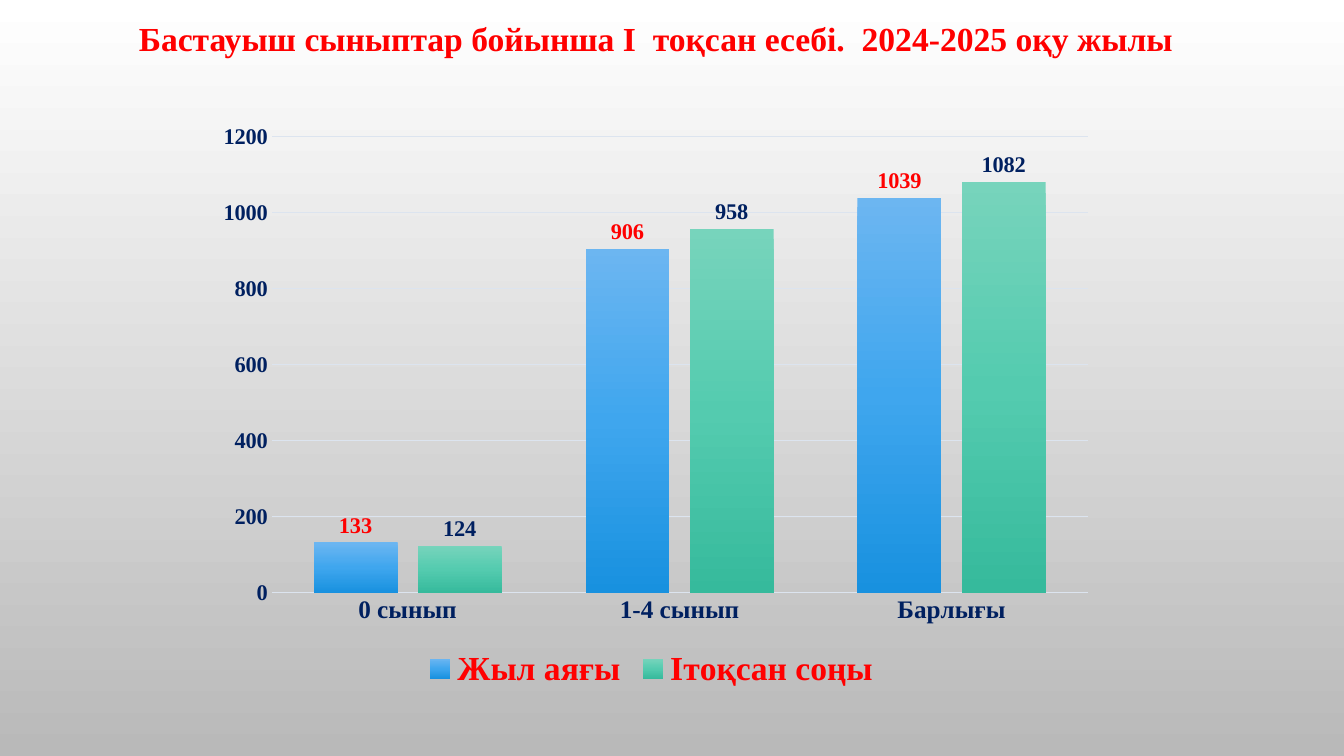
import copy
from dataclasses import dataclass

import pptx
import pptx.chart.data
import pptx.dml.color
import pptx.enum.chart
import pptx.enum.text
import pptx.util
from pptx.util import Cm

TITLE = "Бастауыш сыныптар бойынша І  тоқсан есебі.  2024-2025 оқу жылы"
CATEGORIES = ["0 сынып", "1-4 сынып", "Барлығы"]
SERIES = {
    "Жыл аяғы": [133, 906, 1039],
    "Ітоқсан соңы ": [124, 958, 1082],
}


@dataclass(frozen=True)
class Theme:
    font: str = "Times New Roman"
    chart_font: str = "Cabin"
    red: str = "FF0000"
    navy: str = "002060"
    black: str = "000000"
    grid: str = "DCE4EF"
    background: tuple = ("FFFFFF", "B9B9B9")
    bars: tuple = (("6CB6F1", "3FA6EE", "1891DF"), ("77D4BC", "54CBAF", "36BA9C"))
    labels: tuple = ("FF0000", "002060")
    heading_size: int = 24
    category_size: int = 18
    value_size: int = 16
    chart_size: int = 10


THEME = Theme()


def rgb(code):
    return pptx.dml.color.RGBColor.from_string(code)


def style_font(font, size, color, bold=True, name=THEME.font):
    font.name = name
    font.size = pptx.util.Pt(size)
    font.bold = bold
    font.color.rgb = rgb(color)


def paint_downwards(fill, owner, colors):
    """Fill with evenly spaced gradient colours; owner is the XML element holding the fill."""
    fill.gradient()
    fill.gradient_angle = 270
    stop_list = owner.xpath(".//a:gsLst")[0]
    while len(stop_list) < len(colors):
        stop_list.append(copy.deepcopy(stop_list[0]))
    for index, (stop, color) in enumerate(zip(fill.gradient_stops, colors)):
        stop.position = index / (len(colors) - 1)
        stop.color.rgb = rgb(color)


def style_line(line):
    line.color.rgb = rgb(THEME.grid)
    line.width = pptx.util.Pt(0.75)


def add_title(slide):
    title = slide.shapes.title
    title.left, title.top, title.width, title.height = Cm(3.12), Cm(0.33), Cm(26.82), Cm(1.27)
    frame = title.text_frame
    frame.text = TITLE
    frame.word_wrap = True
    frame.vertical_anchor = pptx.enum.text.MSO_ANCHOR.TOP
    paragraph = frame.paragraphs[0]
    paragraph.alignment = pptx.enum.text.PP_ALIGN.CENTER
    style_font(paragraph.runs[0].font, THEME.heading_size, THEME.red)


def style_axes(chart):
    category_axis, value_axis = chart.category_axis, chart.value_axis
    for axis, size in ((category_axis, THEME.category_size), (value_axis, THEME.value_size)):
        axis.major_tick_mark = pptx.enum.chart.XL_TICK_MARK.NONE
        axis.minor_tick_mark = pptx.enum.chart.XL_TICK_MARK.NONE
        style_font(axis.tick_labels.font, size, THEME.navy)
    style_line(category_axis.format.line)
    value_axis.format.line.fill.background()
    style_line(value_axis.major_gridlines.format.line)
    value_axis.minimum_scale, value_axis.maximum_scale = 0, 1200
    value_axis.major_unit = 200


def style_series(plot):
    plot.gap_width = 100
    plot.overlap = -24
    plot.vary_by_categories = False
    for series, colors, label_color in zip(plot.series, THEME.bars, THEME.labels):
        paint_downwards(series.format.fill, series._element, colors)
        labels = series.data_labels
        labels.show_value = True
        labels.position = pptx.enum.chart.XL_LABEL_POSITION.OUTSIDE_END
        style_font(labels.font, THEME.value_size, label_color)


def add_pupil_chart(slide):
    data = pptx.chart.data.CategoryChartData()
    data.categories = CATEGORIES
    for name, values in SERIES.items():
        data.add_series(name, values)
    chart = slide.shapes.add_chart(
        pptx.enum.chart.XL_CHART_TYPE.COLUMN_CLUSTERED,
        Cm(5.18), Cm(2.84), Cm(22.68), Cm(14.66), data,
    ).chart
    chart.has_title = False
    style_font(chart.font, THEME.chart_size, THEME.black, False, THEME.chart_font)
    chart.has_legend = True
    chart.legend.position = pptx.enum.chart.XL_LEGEND_POSITION.BOTTOM
    chart.legend.include_in_layout = False
    style_font(chart.legend.font, THEME.heading_size, THEME.red)
    style_axes(chart)
    style_series(chart.plots[0])


def main():
    presentation = pptx.Presentation()
    presentation.slide_width, presentation.slide_height = Cm(33.87), Cm(19.05)
    slide = presentation.slides.add_slide(presentation.slide_layouts.get_by_name("Title Only"))
    paint_downwards(slide.background.fill, slide._element, THEME.background)
    add_title(slide)
    add_pupil_chart(slide)
    presentation.save("out.pptx")


if __name__ == "__main__":
    main()
